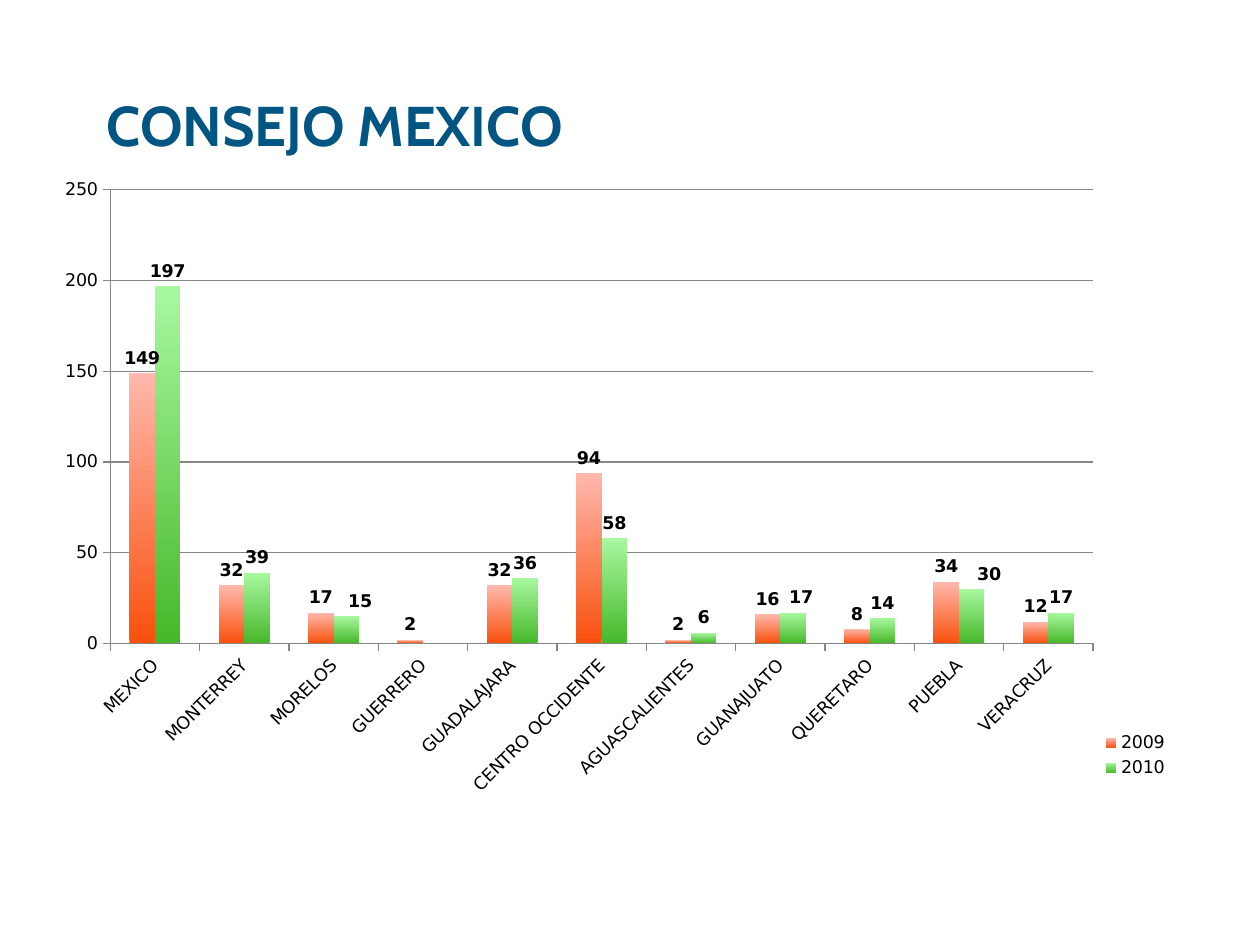
from dataclasses import dataclass

from lxml import etree
from pptx import Presentation
from pptx import util as u
from pptx.chart.data import CategoryChartData
from pptx.dml.color import RGBColor
from pptx.enum import chart as ch, text
from pptx.oxml.ns import qn

SCALE = u.Inches(1) / 126
GREY = "868686"
CHART_FONT = "DejaVu Sans"


@dataclass
class Box:
    x: int
    y: int
    w: int
    h: int


@dataclass
class YearSeries:
    name: str
    values: tuple
    bottom: str
    top: str
    label_shifts: dict  # point index -> px to the right


TITLE = Box(94, 84, 1071, 158)
CHART = Box(42, 168, 1155, 640)
PLOT = Box(110, 190, 983, 454)
LEGEND = Box(1100, 728, 70, 55)
CITIES = ("MEXICO", "MONTERREY", "MORELOS", "GUERRERO", "GUADALAJARA",
          "CENTRO OCCIDENTE", "AGUASCALIENTES", "GUANAJUATO", "QUERETARO",
          "PUEBLA", "VERACRUZ")
YEARS = (
    YearSeries("2009", (149, 32, 17, 2, 32, 94, 2, 16, 8, 34, 12),
               "F8500C", "FFB8AD", {}),
    YearSeries("2010", (197, 39, 15, None, 36, 58, 6, 17, 14, 30, 17),
               "47B82A", "A8F8A0", {2: 14, 7: 8, 9: 17}),
)


def px(n: int) -> int:
    return round(n * SCALE)


def place(box: Box) -> tuple:
    return px(box.x), px(box.y), px(box.w), px(box.h)


def rgb(color: str) -> RGBColor:
    return RGBColor.from_string(color)


def style_font(font, size: float, name: str, color: str, bold: bool = False) -> None:
    font.size, font.name, font.bold = u.Pt(size), name, bold
    font.color.rgb = rgb(color)


def new_layout(**values) -> etree._Element:
    """Make a manual chart layout from its child names and values."""
    layout = etree.Element(qn("c:layout"))
    manual = etree.SubElement(layout, qn("c:manualLayout"))
    for tag, value in values.items():
        etree.SubElement(manual, qn(f"c:{tag}")).set("val", str(value))
    return layout


def box_layout(box: Box, **target) -> etree._Element:
    return new_layout(**target, xMode="edge", yMode="edge",
                      x=round((box.x - CHART.x) / CHART.w, 3),
                      y=round((box.y - CHART.y) / CHART.h, 3),
                      w=round(box.w / CHART.w, 3), h=round(box.h / CHART.h, 3))


def set_layout(parent, layout: etree._Element, after: str | None = None) -> None:
    for old in parent.findall(qn("c:layout")):
        parent.remove(old)
    if after:
        parent.find(qn(after)).addnext(layout)
    else:
        parent.insert(0, layout)


def style_axis(axis) -> None:
    axis.major_tick_mark = ch.XL_TICK_MARK.OUTSIDE
    axis.minor_tick_mark = ch.XL_TICK_MARK.NONE
    style_line(axis.format.line)
    style_font(axis.tick_labels.font, 10, CHART_FONT, "000000")


def style_line(line) -> None:
    line.color.rgb = rgb(GREY)
    line.width = u.Pt(0.75)


def style_series(series, year: YearSeries) -> None:
    fill = series.format.fill
    fill.gradient()
    fill.gradient_angle = 90
    for stop, color in zip(fill.gradient_stops, (year.bottom, year.top)):
        stop.color.rgb = rgb(color)
    series.invert_if_negative = False
    labels = series.data_labels
    labels.show_value = True
    labels.position = ch.XL_LABEL_POSITION.OUTSIDE_END
    style_font(labels.font, 10, CHART_FONT, "000000", True)
    for i, shift in year.label_shifts.items():
        label = series.points[i].data_label
        label.position = ch.XL_LABEL_POSITION.OUTSIDE_END
        style_font(label.font, 10, CHART_FONT, "000000", True)
        item = labels._element.xpath(f"c:dLbl[c:idx/@val='{i}']")[0]
        set_layout(item, new_layout(x=round(shift / CHART.w, 3), y=0), "c:idx")


def add_title(s) -> None:
    title = s.shapes.title
    title.left, title.top, title.width, title.height = place(TITLE)
    tf = title.text_frame
    tf.text = "CONSEJO MEXICO"
    tf.vertical_anchor = text.MSO_ANCHOR.TOP
    tf.auto_size = text.MSO_AUTO_SIZE.NONE
    p = tf.paragraphs[0]
    p.alignment = text.PP_ALIGN.LEFT
    style_font(p.runs[0].font, 32, "Cabin", "005582", True)


def add_city_chart(s) -> None:
    data = CategoryChartData()
    data.categories = CITIES
    for year in YEARS:
        data.add_series(year.name, year.values)
    chart = s.shapes.add_chart(ch.XL_CHART_TYPE.COLUMN_CLUSTERED,
                               *place(CHART), data).chart
    chart.has_title = False
    style_font(chart.font, 10, CHART_FONT, "000000")
    plot = chart.plots[0]
    plot.gap_width, plot.overlap, plot.vary_by_categories = 150, 0, False
    for series, year in zip(plot.series, YEARS):
        style_series(series, year)

    for axis in (chart.category_axis, chart.value_axis):
        style_axis(axis)
    body = chart.category_axis._element.find(f"{qn('c:txPr')}/{qn('a:bodyPr')}")
    body.set("rot", str(-45 * 60000))
    body.set("vert", "horz")
    values = chart.value_axis
    values.minimum_scale, values.maximum_scale, values.major_unit = 0, 250, 50
    style_line(values.major_gridlines.format.line)

    chart.has_legend = True
    legend = chart.legend
    legend.position = ch.XL_LEGEND_POSITION.RIGHT
    legend.include_in_layout = False
    style_font(legend.font, 10, CHART_FONT, "000000")
    set_layout(legend._element, box_layout(LEGEND), "c:legendPos")
    set_layout(chart._chartSpace.chart.plotArea,
               box_layout(PLOT, layoutTarget="inner"))


def main() -> None:
    prs = Presentation()
    prs.slide_width, prs.slide_height = u.Inches(10), u.Inches(7.5)
    s = prs.slides.add_slide(prs.slide_layouts[5])
    add_title(s)
    add_city_chart(s)
    prs.save("out.pptx")


if __name__ == "__main__":
    main()
